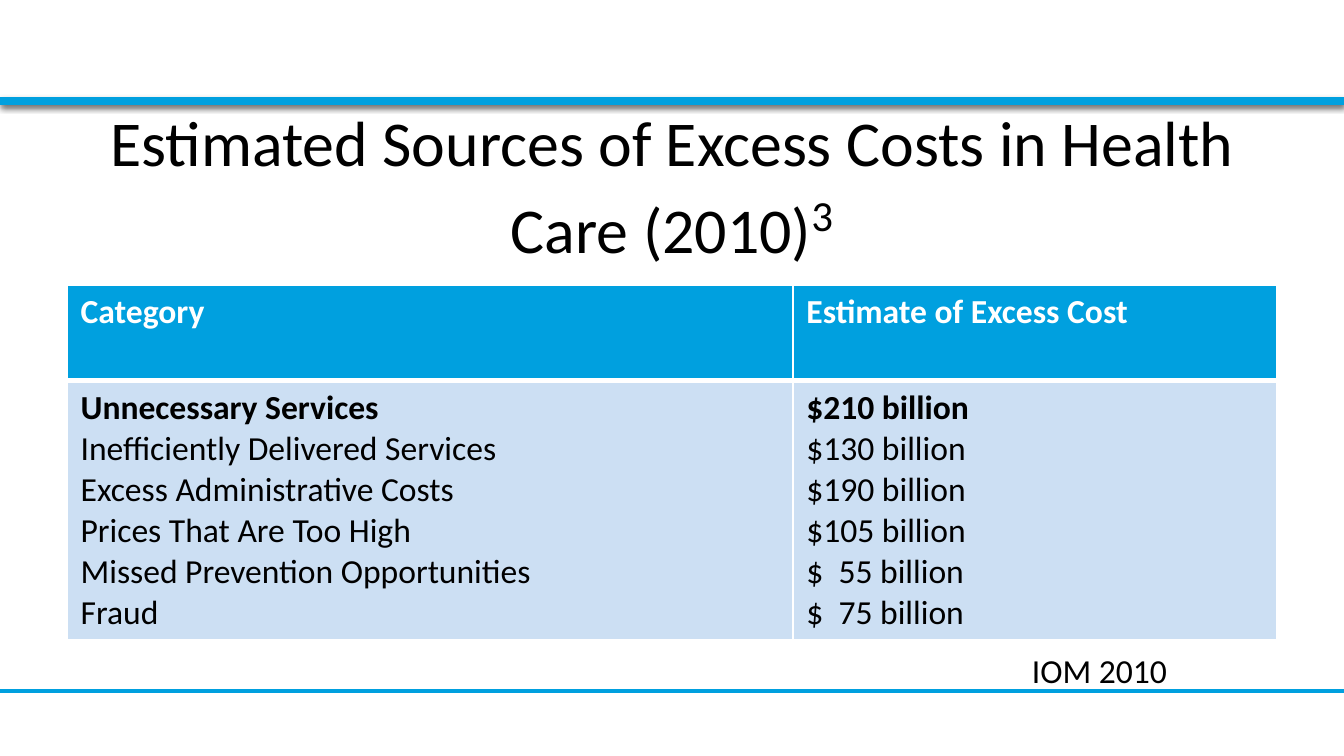
from typing import NamedTuple

from lxml.etree import SubElement
from pptx import Presentation
from pptx.dml.color import RGBColor
from pptx.enum.shapes import MSO_CONNECTOR as Link, MSO_SHAPE as Shape
from pptx.enum.text import MSO_ANCHOR as Anchor, MSO_AUTO_SIZE as Fit, PP_ALIGN as Align
from pptx.oxml.ns import qn
from pptx.util import Inches, Pt

FONT = "Calibri"
BLUE, PALE, WHITE, BLACK = "00A0DF", "CCDFF3", "FFFFFF", "000000"
WIDTH = 10
HEIGHT = WIDTH * 9 / 16


class Rule(NamedTuple):
    y: float
    weight: float
    shade: int  # shadow opacity in percent, 0 for none


class Cost(NamedTuple):
    source: str
    amount: str


RULES = [Rule(5.14, 2, 0), Rule(0.75, 4.5, 38)]
HEADS = Cost("Category", "Estimate of Excess Cost")
COSTS = [
    Cost("Unnecessary Services", "$210 billion"),
    Cost("Inefficiently Delivered Services", "$130 billion"),
    Cost("Excess Administrative Costs", "$190 billion"),
    Cost("Prices That Are Too High", "$105 billion"),
    Cost("Missed Prevention Opportunities", "$  55 billion"),
    Cost("Fraud", "$  75 billion"),
]


def color(code: str) -> RGBColor:
    return RGBColor.from_string(code)


def style(font, size: float, code: str, bold: bool = False) -> None:
    font.name, font.size, font.bold = FONT, Pt(size), bold
    font.color.rgb = color(code)


def place(shape, left: float, top: float, width: float, height: float) -> None:
    shape.left, shape.top = Inches(left), Inches(top)
    shape.width, shape.height = Inches(width), Inches(height)


def set_shadow(shape, shade: int) -> None:
    """Give a downward shadow, or an empty effect list when shade is 0."""
    props = shape._element.spPr
    for old in props.findall(qn("a:effectLst")):
        props.remove(old)
    effects = SubElement(props, qn("a:effectLst"))
    if shade:
        outer = SubElement(effects, qn("a:outerShdw"), blurRad=str(Pt(3.1)),
                           dist=str(Pt(1.7)), dir="5400000", rotWithShape="0")
        tint = SubElement(outer, qn("a:srgbClr"), val=BLACK)
        SubElement(tint, qn("a:alpha"), val=str(shade * 1000))


def add_band(slide) -> None:
    band = slide.shapes.add_shape(Shape.RECTANGLE, 0, 0, Inches(WIDTH), Inches(0.77))
    band.fill.solid()
    band.fill.fore_color.rgb = color(WHITE)
    band.line.fill.background()
    set_shadow(band, 35)


def add_rule(slide, rule: Rule) -> None:
    y = Inches(rule.y)
    line = slide.shapes.add_connector(Link.STRAIGHT, 0, y, Inches(WIDTH), y)
    line.line.color.rgb = color(BLUE)
    line.line.width = Pt(rule.weight)
    set_shadow(line, rule.shade)


def set_title(slide) -> None:
    title = slide.shapes.title
    place(title, 0.5, 0.91, 9, 0.94)
    frame = title.text_frame
    frame.word_wrap, frame.auto_size = True, Fit.NONE
    frame.vertical_anchor = Anchor.MIDDLE
    frame.text = "Estimated Sources of Excess Costs in Health Care (2010)"
    par = frame.paragraphs[0]
    par.alignment = Align.CENTER
    style(par.runs[0].font, 34.2, BLACK)
    note = par.add_run()
    note.text = "3"
    style(note.font, 39.6, BLACK)
    note._r.get_or_add_rPr().set("baseline", "30000")


def set_cell(cell, lines: list[str], head: bool) -> None:
    """Fill a cell; its first line is bold."""
    cell.text_frame.text = "\n".join(lines)
    for i, par in enumerate(cell.text_frame.paragraphs):
        style(par.runs[0].font, 18, WHITE if head else BLACK, i == 0)
    props = cell._tc.get_or_add_tcPr()
    for side in ("lnL", "lnR", "lnT", "lnB"):
        weight = 3 if head and side == "lnB" else 1
        edge = SubElement(props, qn(f"a:{side}"), w=str(Pt(weight)))
        SubElement(SubElement(edge, qn("a:solidFill")), qn("a:srgbClr"), val=WHITE)
    cell.fill.solid()
    cell.fill.fore_color.rgb = color(BLUE if head else PALE)


def add_costs(slide) -> None:
    table = slide.shapes.add_table(
        2, 2, Inches(0.5), Inches(2.12), Inches(9), Inches(2.63)).table
    for col, width in zip(table.columns, (5.4, 3.6)):
        col.width = Inches(width)
    for row, height in zip(table.rows, (0.71, 1.92)):
        row.height = Inches(height)
    for i, (head, body) in enumerate(zip(HEADS, zip(*COSTS))):
        set_cell(table.cell(0, i), [head], True)
        set_cell(table.cell(1, i), list(body), False)


def add_credit(slide) -> None:
    box = slide.shapes.add_textbox(0, 0, 0, 0)
    place(box, 7.58, 4.79, 2.06, 0.4)
    frame = box.text_frame
    frame.word_wrap = True
    frame.text = "IOM 2010"
    style(frame.paragraphs[0].runs[0].font, 18, BLACK)


def main() -> None:
    deck = Presentation()
    deck.slide_width, deck.slide_height = Inches(WIDTH), Inches(HEIGHT)
    slide = deck.slides.add_slide(deck.slide_layouts[5])
    add_band(slide)
    for rule in RULES:
        add_rule(slide, rule)
    set_title(slide)
    add_costs(slide)
    add_credit(slide)
    deck.save("out.pptx")


if __name__ == "__main__":
    main()
